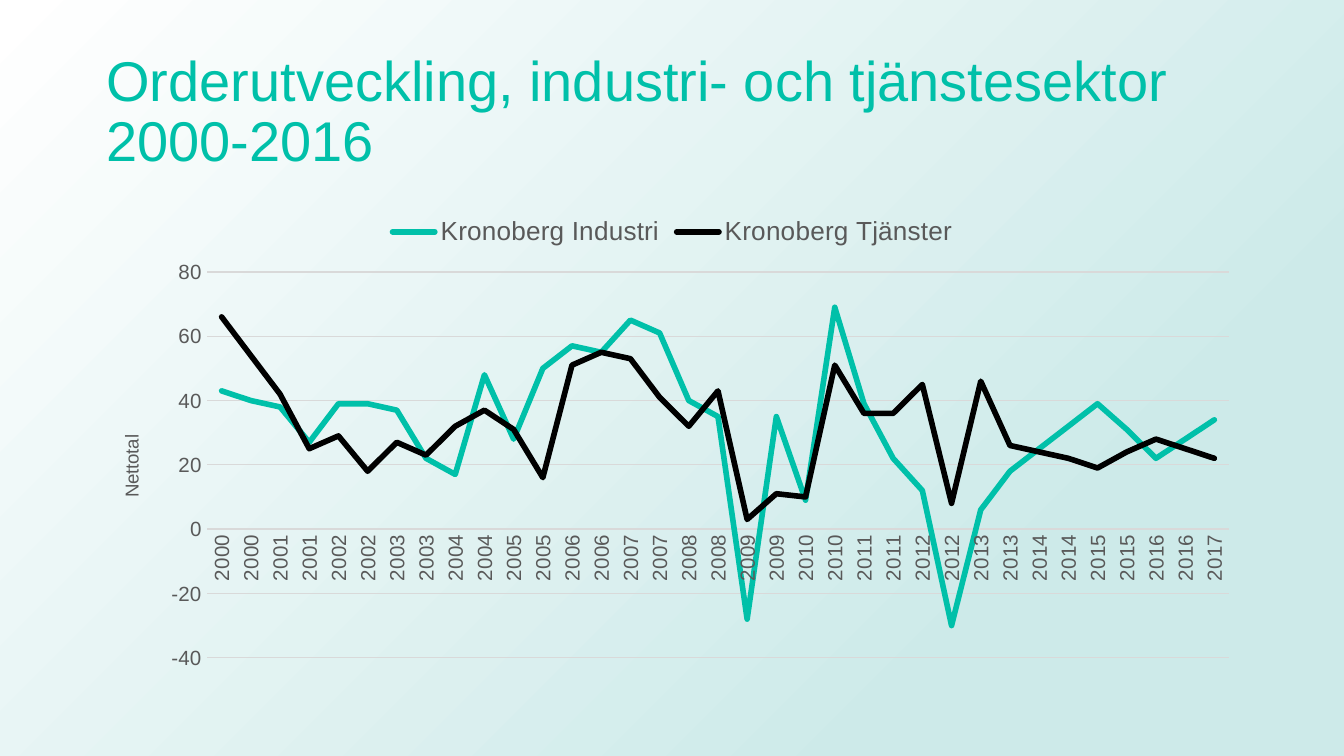
from dataclasses import dataclass

from lxml.etree import SubElement
from pptx import Presentation
from pptx.chart.data import CategoryChartData
from pptx.dml.color import RGBColor
from pptx.enum.chart import XL_CHART_TYPE, XL_LEGEND_POSITION, XL_MARKER_STYLE, XL_TICK_MARK
from pptx.enum.shapes import MSO_SHAPE
from pptx.enum.text import MSO_ANCHOR, MSO_AUTO_SIZE, PP_ALIGN
from pptx.oxml import parse_xml
from pptx.oxml.ns import nsdecls, qn
from pptx.util import Pt

EMU_PER_PX = 914400 / 134.4
SLIDE_W, SLIDE_H = 1344, 756

ORDERS = {
    "Kronoberg Industri": [
        43, 40, 38, 27, 39, 39, 37, 22, 17, 48, 28, 50, 57, 55, 65, 61, 40, 35,
        -28, 35, 9, 69, 39, 22, 12, -30, 6, 18, 25, 32, 39, 31, 22, 28, 34],
    "Kronoberg Tjänster": [
        66, 54, 42, 25, 29, 18, 27, 23, 32, 37, 31, 16, 51, 55, 53, 41, 32, 43,
        3, 11, 10, 51, 36, 36, 45, 8, 46, 26, 24, 22, 19, 24, 28, 25, 22],
}
HALF_YEARS = [str(2000 + half // 2) for half in range(35)]


@dataclass(frozen=True)
class Theme:
    font: str = "Arial"
    teal: str = "00C0A9"
    black: str = "000000"
    grey: str = "595959"
    grid: str = "D9D9D9"
    mist: str = "CDEAE9"
    white: str = "FFFFFF"
    title_size: int = 30
    legend_size: int = 14
    tick_size: int = 11
    axis_title_size: int = 10


def px(length):
    return round(length * EMU_PER_PX)


def set_layout(parent, index, **values):
    old = parent.find(qn("c:layout"))
    if old is not None:
        parent.remove(old)
    layout = parse_xml(f"<c:layout {nsdecls('c')}><c:manualLayout/></c:layout>")
    for tag, value in values.items():
        SubElement(layout[0], qn(f"c:{tag}")).set("val", str(value))
    parent.insert(index, layout)


def turn_upright(body):
    body.set("rot", "-5400000")
    body.set("vert", "horz")


class SlideBuilder:
    def __init__(self, slide, theme):
        self.slide = slide
        self.theme = theme

    def style_font(self, font, size, color):
        font.name = self.theme.font
        font.size = Pt(size)
        font.bold = False
        font.color.rgb = RGBColor.from_string(color)

    def style_line(self, line, color, width):
        line.color.rgb = RGBColor.from_string(color)
        line.width = Pt(width)

    def backdrop(self):
        panel = self.slide.shapes.add_shape(
            MSO_SHAPE.RECTANGLE, 0, 0, px(SLIDE_W), px(SLIDE_H))
        panel.shadow.inherit = False
        panel.line.fill.background()
        panel.fill.gradient()
        colors = (self.theme.mist, self.theme.white)
        for stop, position, color in zip(panel.fill.gradient_stops, (0.23, 1), colors):
            stop.position = position
            stop.color.rgb = RGBColor.from_string(color)
        gradient = panel._element.spPr.find(qn("a:gradFill"))
        gradient.remove(gradient.find(qn("a:lin")))
        glow = SubElement(gradient, qn("a:path"), path="circle")
        SubElement(glow, qn("a:fillToRect"), l="100000", t="100000")
        self.slide.shapes._spTree.insert(2, panel._element)

    def title(self, text, left, top, width, height):
        heading = self.slide.shapes.title
        heading.left, heading.top = px(left), px(top)
        heading.width, heading.height = px(width), px(height)
        frame = heading.text_frame
        frame.text = text
        frame.word_wrap = True
        frame.auto_size = MSO_AUTO_SIZE.NONE
        frame.vertical_anchor = MSO_ANCHOR.MIDDLE
        paragraph = frame.paragraphs[0]
        paragraph.alignment = PP_ALIGN.LEFT
        paragraph.line_spacing = 0.9
        self.style_font(paragraph.font, self.theme.title_size, self.theme.teal)

    def line_chart(self, categories, series, axis_title, left, top, width, height):
        theme = self.theme
        data = CategoryChartData()
        data.categories = categories
        for name, values in series.items():
            data.add_series(name, values)
        chart = self.slide.shapes.add_chart(
            XL_CHART_TYPE.LINE, px(left), px(top), px(width), px(height), data).chart
        chart.has_title = False
        self.style_font(chart.font, theme.tick_size, theme.grey)

        chart.has_legend = True
        chart.legend.position = XL_LEGEND_POSITION.TOP
        chart.legend.include_in_layout = False
        self.style_font(chart.legend.font, theme.legend_size, theme.grey)

        plot = chart.plots[0]
        plot.vary_by_categories = False
        for sector, color in zip(plot.series, (theme.teal, theme.black)):
            sector.smooth = False
            sector.marker.style = XL_MARKER_STYLE.NONE
            self.style_line(sector.format.line, color, 3)
            sector._element.find(".//" + qn("a:ln")).set("cap", "rnd")

        years, nettotal = chart.category_axis, chart.value_axis
        for axis in (years, nettotal):
            axis.major_tick_mark = axis.minor_tick_mark = XL_TICK_MARK.NONE
            self.style_font(axis.tick_labels.font, theme.tick_size, theme.grey)
        self.style_line(years.format.line, theme.grid, 0.75)
        turn_upright(years._element.find(qn("c:txPr")).find(qn("a:bodyPr")))

        nettotal.minimum_scale, nettotal.maximum_scale = -40, 80
        nettotal.major_unit = 20
        nettotal.tick_labels.number_format = "0"
        nettotal.tick_labels.number_format_is_linked = False
        nettotal.format.line.fill.background()
        self.style_line(nettotal.major_gridlines.format.line, theme.grid, 0.75)
        caption = nettotal.axis_title
        caption.text_frame.text = axis_title
        self.style_font(caption.text_frame.paragraphs[0].font,
                        theme.axis_title_size, theme.grey)
        turn_upright(caption._element.find(".//" + qn("a:bodyPr")))

        set_layout(caption._element, 1, xMode="edge", yMode="edge", x=0.02, y=0.48)
        set_layout(chart._chartSpace.find(".//" + qn("c:plotArea")), 0,
                   layoutTarget="inner", xMode="edge", yMode="edge",
                   x=round(114 / width, 4), y=round(70 / height, 4),
                   w=round(1022 / width, 4), h=round(386 / height, 4))


def main():
    deck = Presentation()
    deck.slide_width, deck.slide_height = px(SLIDE_W), px(SLIDE_H)
    builder = SlideBuilder(deck.slides.add_slide(deck.slide_layouts[5]), Theme())
    builder.backdrop()
    builder.title("Orderutveckling, industri- och tjänstesektor 2000-2016",
                  93, 40, 1159, 147)
    builder.line_chart(HALF_YEARS, ORDERS, "Nettotal", 93, 202, 1159, 478)
    deck.save("out.pptx")


if __name__ == "__main__":
    main()
